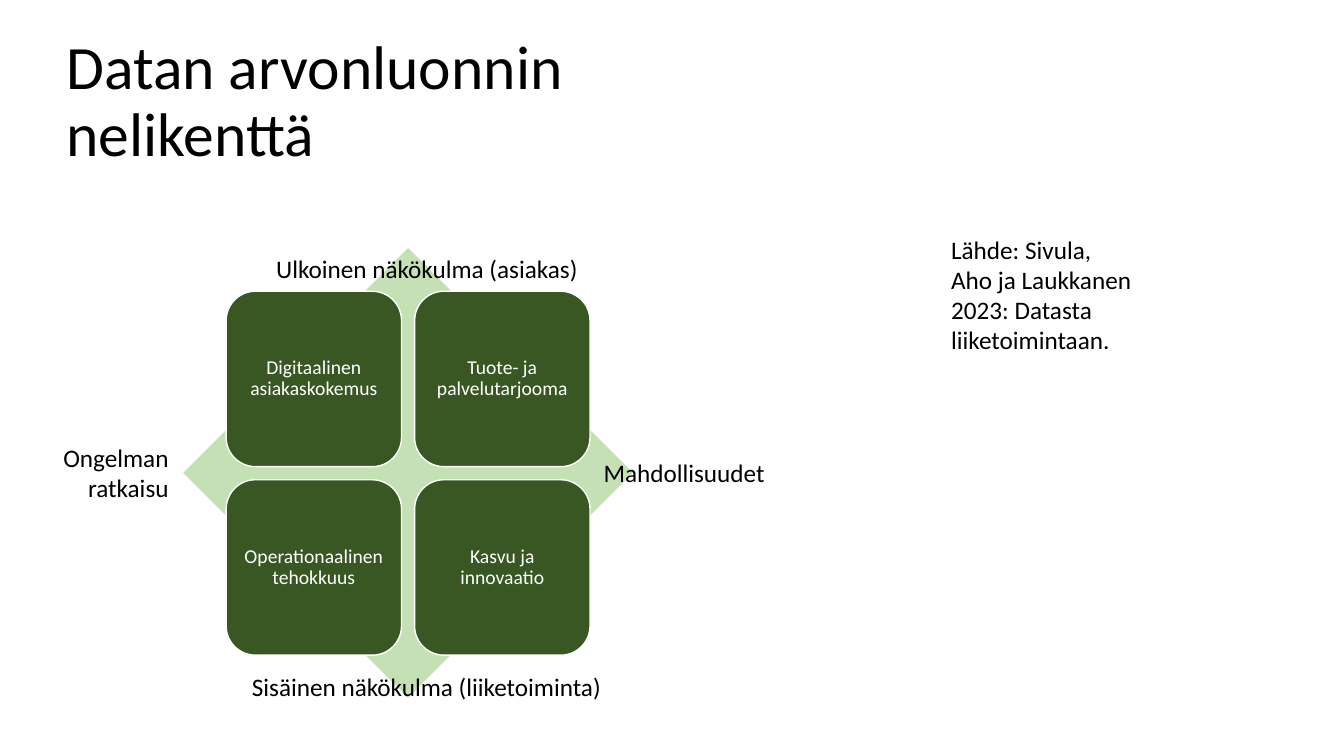
"""Builds the slide on the four fields of value creation from data."""
from dataclasses import dataclass

from pptx import Presentation
from pptx.dml.color import RGBColor
from pptx.enum.shapes import MSO_SHAPE
from pptx.enum.text import MSO_ANCHOR, MSO_AUTO_SIZE, PP_ALIGN
from pptx.util import Cm, Pt

DIAMOND, ROUNDED = MSO_SHAPE.DIAMOND, MSO_SHAPE.ROUNDED_RECTANGLE
LEFT, CENTER, RIGHT = PP_ALIGN.LEFT, PP_ALIGN.CENTER, PP_ALIGN.RIGHT
MIDDLE = MSO_ANCHOR.MIDDLE
NO_FIT, GROW = MSO_AUTO_SIZE.NONE, MSO_AUTO_SIZE.SHAPE_TO_FIT_TEXT


@dataclass(frozen=True)
class Theme:
    font: str = "Calibri"
    ink: str = "000000"
    paper: str = "FFFFFF"
    backdrop: str = "C5E0B4"
    tile: str = "385723"
    title_size: int = 44
    label_size: int = 18
    tile_size: int = 14


class Deck:
    def __init__(self, prs, theme):
        self.theme = theme
        self.s = prs.slides.add_slide(prs.slide_layouts[5])

    def set_text(self, tf, text, size, color, align, spacing=None):
        tf.text = text
        p = tf.paragraphs[0]
        p.alignment = align
        p.line_spacing = spacing
        p.font.name = self.theme.font
        p.font.size = Pt(size)
        p.font.color.rgb = RGBColor.from_string(color)

    def title(self, text, x, y, w, h):
        sp = self.s.shapes.title
        sp.left, sp.top, sp.width, sp.height = Cm(x), Cm(y), Cm(w), Cm(h)
        tf = sp.text_frame
        tf.auto_size = NO_FIT
        tf.vertical_anchor = MIDDLE
        self.set_text(tf, text, self.theme.title_size, self.theme.ink, LEFT, 0.9)

    def shape(self, kind, x, y, side, fill):
        sp = self.s.shapes.add_shape(kind, Cm(x), Cm(y), Cm(side), Cm(side))
        sp.shadow.inherit = False
        sp.fill.solid()
        sp.fill.fore_color.rgb = RGBColor.from_string(fill)
        sp.line.fill.background()
        return sp

    def tile(self, text, x, y, side):
        sp = self.shape(ROUNDED, x, y, side, self.theme.tile)
        sp.line.color.rgb = RGBColor.from_string(self.theme.paper)
        sp.line.width = Pt(1)
        tf = sp.text_frame
        tf.word_wrap = True
        tf.vertical_anchor = MIDDLE
        tf.margin_left = tf.margin_right = Cm(0.15)
        tf.margin_top = tf.margin_bottom = Cm(0.15)
        self.set_text(tf, text, self.theme.tile_size, self.theme.paper, CENTER, 0.9)

    def label(self, text, x, y, w, h, align=LEFT, wrap=False):
        sp = self.s.shapes.add_textbox(Cm(x), Cm(y), Cm(w), Cm(h))
        tf = sp.text_frame
        tf.word_wrap = wrap
        tf.auto_size = GROW
        self.set_text(tf, text, self.theme.label_size, self.theme.ink, align)


def main():
    prs = Presentation()
    prs.slide_width, prs.slide_height = Cm(33.87), Cm(19.05)
    deck = Deck(prs, Theme())

    deck.title("Datan arvonluonnin nelikenttä", 1.42, 0.23, 18.19, 4.72)
    deck.shape(DIAMOND, 4.62, 6.25, 11.33, deck.theme.backdrop)

    fields = ["Digitaalinen asiakaskokemus", "Tuote- ja palvelutarjooma",
              "Operationaalinen tehokkuus", "Kasvu ja innovaatio"]
    left, top, side, step = 5.7, 7.34, 4.42, 4.75
    for i, field in enumerate(fields):
        row, col = divmod(i, 2)
        deck.tile(field, left + col * step, top + row * step, side)

    deck.label("Ulkoinen näkökulma (asiakas)", 6.71, 6.25, 8.18, 1.02)
    deck.label("Mahdollisuudet", 14.96, 11.4, 4.62, 1.02)
    deck.label("Sisäinen näkökulma (liiketoiminta)", 6.1, 16.79, 9.4, 1.02)
    deck.label("Ongelman ratkaisu", 0.97, 11.02, 3.53, 1.8, RIGHT, True)
    deck.label("Lähde: Sivula, Aho ja Laukkanen 2023: Datasta liiketoimintaan.",
               23.72, 5.77, 5.2, 3.33, LEFT, True)

    prs.save("out.pptx")


if __name__ == "__main__":
    main()
